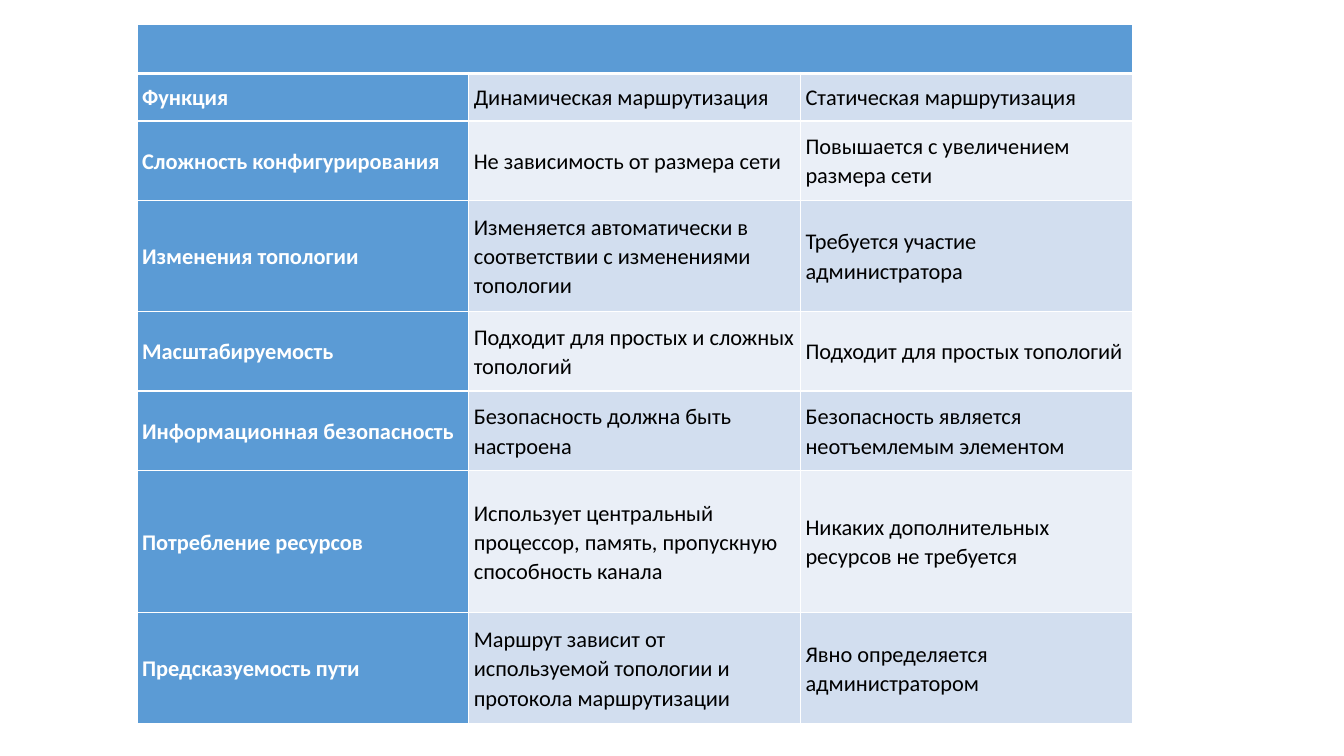
from lxml import etree
from pptx import Presentation
from pptx import util as u
from pptx.dml import color
from pptx.enum import text
from pptx.oxml import ns

COLORS = {
    "header": "5B9BD5",
    "band_dark": "D2DEEF",
    "band_light": "EAEFF7",
    "white": "FFFFFF",
    "black": "000000",
}

COLUMN_WIDTH = 3.29
HEADER_HEIGHT = 0.49

# Each row: height, feature, dynamic routing, static routing
ROUTING_ROWS = [
    (0.47, "Функция", "Динамическая маршрутизация", "Статическая маршрутизация"),
    (0.79, "Сложность конфигурирования", "Не зависимость от размера сети",
     "Повышается с увеличением размера сети"),
    (1.1, "Изменения топологии",
     "Изменяется автоматически в соответствии с изменениями топологии",
     "Требуется участие администратора"),
    (0.79, "Масштабируемость", "Подходит для простых и сложных топологий",
     "Подходит для простых топологий"),
    (0.79, "Информационная безопасность", "Безопасность должна быть настроена",
     "Безопасность является неотъемлемым элементом"),
    (1.41, "Потребление ресурсов",
     "Использует центральный процессор, память, пропускную способность канала",
     "Никаких дополнительных ресурсов не требуется"),
    (1.1, "Предсказуемость пути",
     "Маршрут зависит от используемой топологии и протокола маршрутизации",
     "Явно определяется администратором"),
]


def write_text(paragraph, content, font="Calibri", size=16, fill="black",
               bold=False, line_spacing=1.07):
    paragraph.line_spacing = line_spacing
    run = paragraph.add_run()
    run.text = content
    run.font.name = font
    run.font.size = u.Pt(size)
    run.font.bold = bold
    run.font.color.rgb = color.RGBColor.from_string(COLORS[fill])


class SlideBuilder:
    """Holds the table style and the current slide."""

    def __init__(self, slide, border="white", margin=0.05):
        self.slide = slide
        self.border = border
        self.margin = u.Inches(margin)

    def add_table(self, left, top, widths, heights):
        frame = self.slide.shapes.add_table(
            len(heights), len(widths), u.Inches(left), u.Inches(top),
            u.Inches(sum(widths)), u.Inches(sum(heights)))
        table = frame.table
        for column, width in zip(table.columns, widths):
            column.width = u.Inches(width)
        for row, height in zip(table.rows, heights):
            row.height = u.Inches(height)
        return table

    def style_cell(self, cell, fill, top=1, bottom=1):
        cell.margin_left = cell.margin_right = self.margin
        cell.margin_top = cell.margin_bottom = self.margin
        cell.vertical_anchor = text.MSO_ANCHOR.MIDDLE
        # Borders come before the fill in the cell properties
        properties = cell._tc.get_or_add_tcPr()
        for side, width in (("L", 1), ("R", 1), ("T", top), ("B", bottom)):
            line = etree.SubElement(properties, ns.qn(f"a:ln{side}"), w=str(u.Pt(width)))
            solid = etree.SubElement(line, ns.qn("a:solidFill"))
            etree.SubElement(solid, ns.qn("a:srgbClr"), val=COLORS[self.border])
        cell.fill.solid()
        cell.fill.fore_color.rgb = color.RGBColor.from_string(COLORS[fill])


def main():
    presentation = Presentation()
    presentation.slide_width = u.Inches(13.33)
    presentation.slide_height = u.Inches(7.5)
    slide = presentation.slides.add_slide(presentation.slide_layouts[6])
    builder = SlideBuilder(slide)

    # Table grid
    heights = [HEADER_HEIGHT] + [height for height, *_ in ROUTING_ROWS]
    table = builder.add_table(1.36, 0.24, [COLUMN_WIDTH] * 3, heights)

    # Empty header band across all columns
    for cell in table.rows[0].cells:
        builder.style_cell(cell, "header", bottom=3)
    table.cell(0, 0).merge(table.cell(0, 2))

    # Feature rows with alternating bands
    for row, (_, *contents) in enumerate(ROUTING_ROWS, start=1):
        band = "band_dark" if row % 2 else "band_light"
        for column, content in enumerate(contents):
            is_feature = column == 0
            cell = table.cell(row, column)
            builder.style_cell(cell, "header" if is_feature else band,
                               top=3 if row == 1 else 1)
            write_text(cell.text_frame.paragraphs[0], content, bold=is_feature,
                       fill="white" if is_feature else "black")

    presentation.save("out.pptx")


if __name__ == "__main__":
    main()
